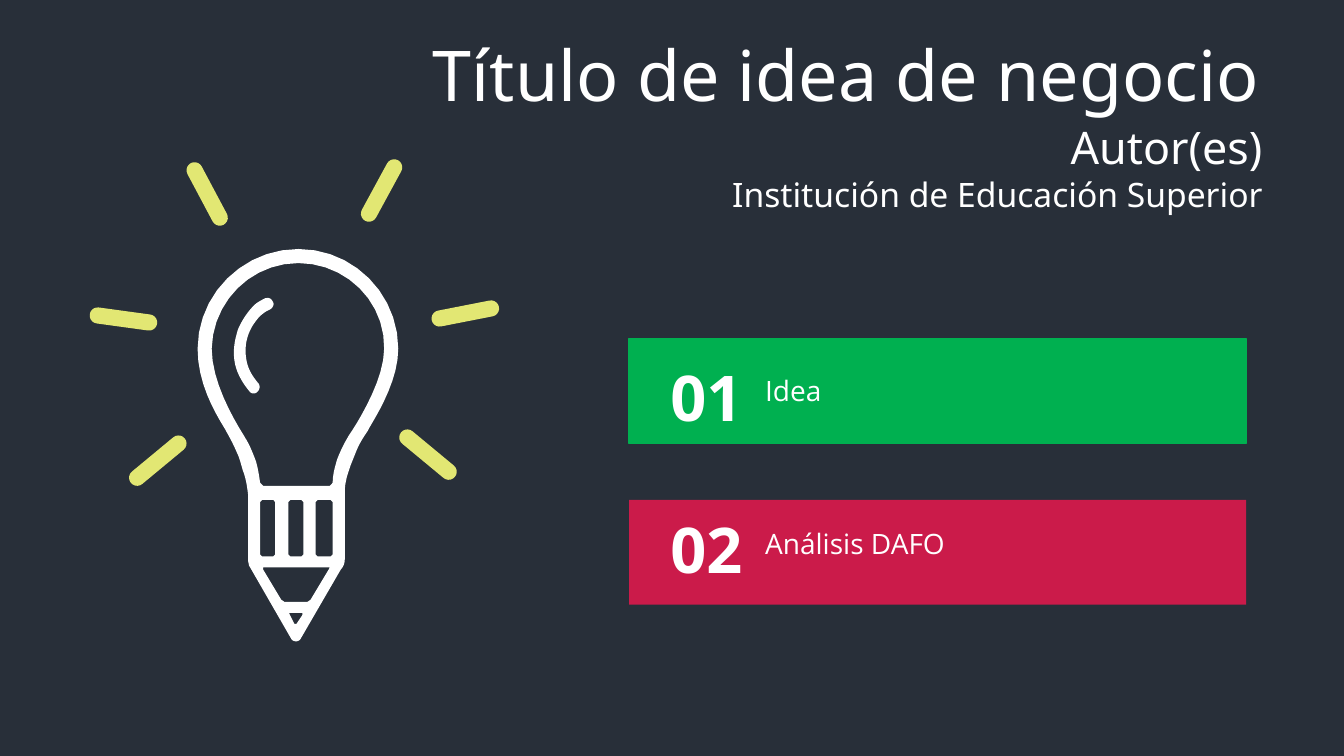
from math import atan2, cos, pi, sin

from pptx import Presentation
from pptx.dml.color import RGBColor
from pptx.enum.shapes import MSO_SHAPE
from pptx.enum.text import MSO_AUTO_SIZE, PP_ALIGN
from pptx.util import Inches, Pt

RECTANGLE = MSO_SHAPE.RECTANGLE
GROW = MSO_AUTO_SIZE.SHAPE_TO_FIT_TEXT
RIGHT, CENTER, JUSTIFY = PP_ALIGN.RIGHT, PP_ALIGN.CENTER, PP_ALIGN.JUSTIFY

NAVY, WHITE, YELLOW = "282F39", "FFFFFF", "E2E773"
GREEN, RED = "00B050", "CB1B4A"
TITLE_FONT, BODY_FONT = "Noto Sans", "Open Sans"

# Contours: a pair is a straight step, six numbers are a cubic curve
BULB_OUTLINE = [
    (2.96, 2.47), (2.41, 2.47, 1.96, 2.92, 1.96, 3.46),
    (1.96, 3.88, 2.22, 4.22, 2.25, 4.29), (2.29, 4.36, 2.32, 4.42, 2.35, 4.49),
    (2.38, 4.55, 2.39, 4.61, 2.41, 4.67), (2.44, 4.75, 2.45, 4.82, 2.46, 4.9),
    (2.46, 5.56), (2.47, 5.61), (2.89, 6.34),
    (2.91, 6.37, 2.96, 6.37, 2.98, 6.34), (3.38, 5.65),
    (3.41, 5.62, 3.42, 5.58, 3.42, 5.54), (3.42, 4.92),
    (3.42, 4.87, 3.42, 4.82, 3.43, 4.78), (3.44, 4.72, 3.46, 4.67, 3.48, 4.61),
    (3.5, 4.56, 3.52, 4.51, 3.54, 4.46), (3.57, 4.39, 3.61, 4.33, 3.65, 4.27),
    (3.68, 4.2, 3.95, 3.82, 3.95, 3.46), (3.95, 2.92, 3.51, 2.47, 2.96, 2.47),
]
GLASS = [
    (3.46, 4.32), (3.42, 4.39), (3.39, 4.45, 3.36, 4.51, 3.34, 4.57),
    (3.32, 4.64, 3.3, 4.71, 3.3, 4.79), (3.27, 4.82), (2.61, 4.82),
    (2.58, 4.79), (2.57, 4.72, 2.56, 4.65, 2.54, 4.58),
    (2.51, 4.5, 2.48, 4.42, 2.43, 4.34), (2.43, 4.33, 2.1, 3.86, 2.1, 3.46),
    (2.11, 2.99, 2.49, 2.61, 2.96, 2.61), (3.43, 2.61, 3.82, 2.99, 3.81, 3.46),
    (3.81, 3.82, 3.46, 4.32, 3.46, 4.32),
]
SLOTS = [
    [(left, 4.98), (left + 0.02, 4.96), (right - 0.02, 4.96), (right, 4.98),
     (right, 5.5), (right - 0.02, 5.52), (left + 0.02, 5.52), (left, 5.5)]
    for left, right in ((2.58, 2.73), (2.86, 3.01), (3.13, 3.3))
]
PENCIL_WOOD = [(2.61, 5.63), (3.27, 5.63), (3.26, 5.65), (3.08, 5.95),
               (3.05, 5.97), (2.82, 5.97), (2.79, 5.95), (2.61, 5.65)]
PENCIL_LEAD = [(2.87, 6.08), (3, 6.08), (3, 6.1), (2.94, 6.19), (2.92, 6.19),
               (2.87, 6.09)]
GLEAM = [
    (2.32, 3.5), (2.32, 3.41, 2.34, 3.34, 2.36, 3.27),
    (2.4, 3.18, 2.45, 3.1, 2.52, 3.03), (2.55, 3, 2.59, 2.98, 2.63, 2.96),
    (2.67, 2.95, 2.69, 2.96, 2.71, 3), (2.72, 3.02, 2.71, 3.05, 2.68, 3.07),
    (2.63, 3.09, 2.58, 3.13, 2.55, 3.17), (2.51, 3.22, 2.48, 3.27, 2.46, 3.33),
    (2.43, 3.42, 2.43, 3.51, 2.45, 3.6), (2.47, 3.68, 2.51, 3.74, 2.56, 3.8),
    (2.58, 3.82, 2.58, 3.86, 2.56, 3.88), (2.54, 3.91, 2.5, 3.91, 2.48, 3.89),
    (2.43, 3.83, 2.39, 3.77, 2.36, 3.7), (2.33, 3.63, 2.32, 3.56, 2.32, 3.5),
]
# Centres of the two round ends of each ray
RAYS = [
    (1.36, 4.74, 1.77, 4.4), (3.91, 1.66, 3.66, 2.12), (1.93, 1.69, 2.18, 2.16),
    (4.04, 4.34, 4.45, 4.68), (4.36, 3.16, 4.87, 3.06), (0.97, 3.13, 1.48, 3.2),
]


def color(value):
    return RGBColor.from_string(value)


def flatten(contour, steps=10):
    """Turn straight steps and cubic curves into a list of points."""
    points = []
    for step in contour:
        if len(step) == 2:
            points.append(step)
            continue
        nodes = [points[-1], step[:2], step[2:4], step[4:]]
        for i in range(1, steps + 1):
            t = i / steps
            weights = ((1 - t) ** 3, 3 * t * (1 - t) ** 2, 3 * t * t * (1 - t), t ** 3)
            points.append(tuple(sum(w * node[axis] for w, node in zip(weights, nodes))
                                for axis in (0, 1)))
    return points


def capsule(x1, y1, x2, y2, radius=0.08, steps=10):
    """Outline of a bar with round ends."""
    heading = atan2(y2 - y1, x2 - x1)
    return [(x + radius * cos(start + pi * i / steps),
             y + radius * sin(start + pi * i / steps))
            for x, y, start in ((x2, y2, heading - pi / 2), (x1, y1, heading + pi / 2))
            for i in range(steps + 1)]


class SlideBuilder:
    def __init__(self, deck):
        self.slide = deck.slides.add_slide(deck.slide_layouts[6])
        self.shapes = self.slide.shapes

    def background(self, fill):
        self.slide.background.fill.solid()
        self.slide.background.fill.fore_color.rgb = color(fill)

    def paint(self, shape, fill, line=None):
        shape.shadow.inherit = False
        shape.fill.solid()
        shape.fill.fore_color.rgb = color(fill)
        if line:
            shape.line.color.rgb = color(line)
            shape.line.width = Pt(1)
        else:
            shape.line.fill.background()

    def outline(self, contours, fill):
        builder = None
        for contour in contours:
            points = [(Inches(x), Inches(y)) for x, y in flatten(contour)]
            if builder is None:
                builder = self.shapes.build_freeform(*points[0], scale=1.0)
            else:
                builder.move_to(*points[0])
            builder.add_line_segments(points[1:], close=True)
        self.paint(builder.convert_to_shape(), fill)

    def text(self, left, top, width, height, lines, font, align, bold=False, shapes=None):
        box = (shapes or self.shapes).add_textbox(
            Inches(left), Inches(top), Inches(width), Inches(height))
        frame = box.text_frame
        frame.word_wrap = True
        frame.auto_size = GROW
        for i, (words, size) in enumerate(lines):
            para = frame.paragraphs[0] if i == 0 else frame.add_paragraph()
            para.alignment = align
            span = para.add_run()
            span.text = words
            span.font.name = font
            span.font.size = Pt(size)
            span.font.bold = bold
            span.font.color.rgb = color(WHITE)

    def section(self, top, text_top, number, label, fill, line=None):
        group = self.shapes.add_group_shape().shapes
        bar = group.add_shape(RECTANGLE, Inches(6.24), Inches(top), Inches(6.12), Inches(1.04))
        self.paint(bar, fill, line)
        self.text(6.36, text_top, 1.29, 0.86, [(number, 45)], BODY_FONT, CENTER, True, group)
        self.text(7.49, text_top + 0.15, 4.4, 0.44, [(label, 20)], BODY_FONT, JUSTIFY,
                  shapes=group)


def main():
    deck = Presentation()
    deck.slide_width, deck.slide_height = Inches(13.33), Inches(7.5)
    page = SlideBuilder(deck)
    page.background(NAVY)

    # Title
    page.text(2.01, 0.26, 10.58, 0.94, [("Título de idea de negocio", 50)], TITLE_FONT, RIGHT)

    # Light bulb with pencil tip
    for ray in RAYS:
        page.outline([capsule(*ray)], YELLOW)
    page.outline([GLEAM], WHITE)
    page.outline([BULB_OUTLINE, GLASS, *SLOTS, PENCIL_WOOD, PENCIL_LEAD], WHITE)

    # Sections
    page.section(3.36, 3.51, "01", "Idea", GREEN, GREEN)
    page.section(4.96, 5.02, "02", "Análisis DAFO", RED)

    # Authors
    page.text(2.04, 1.14, 10.58, 1.04,
              [("Autor(es)", 32), ("Institución de Educación Superior", 24)], TITLE_FONT, RIGHT)

    deck.save("out.pptx")


if __name__ == "__main__":
    main()
